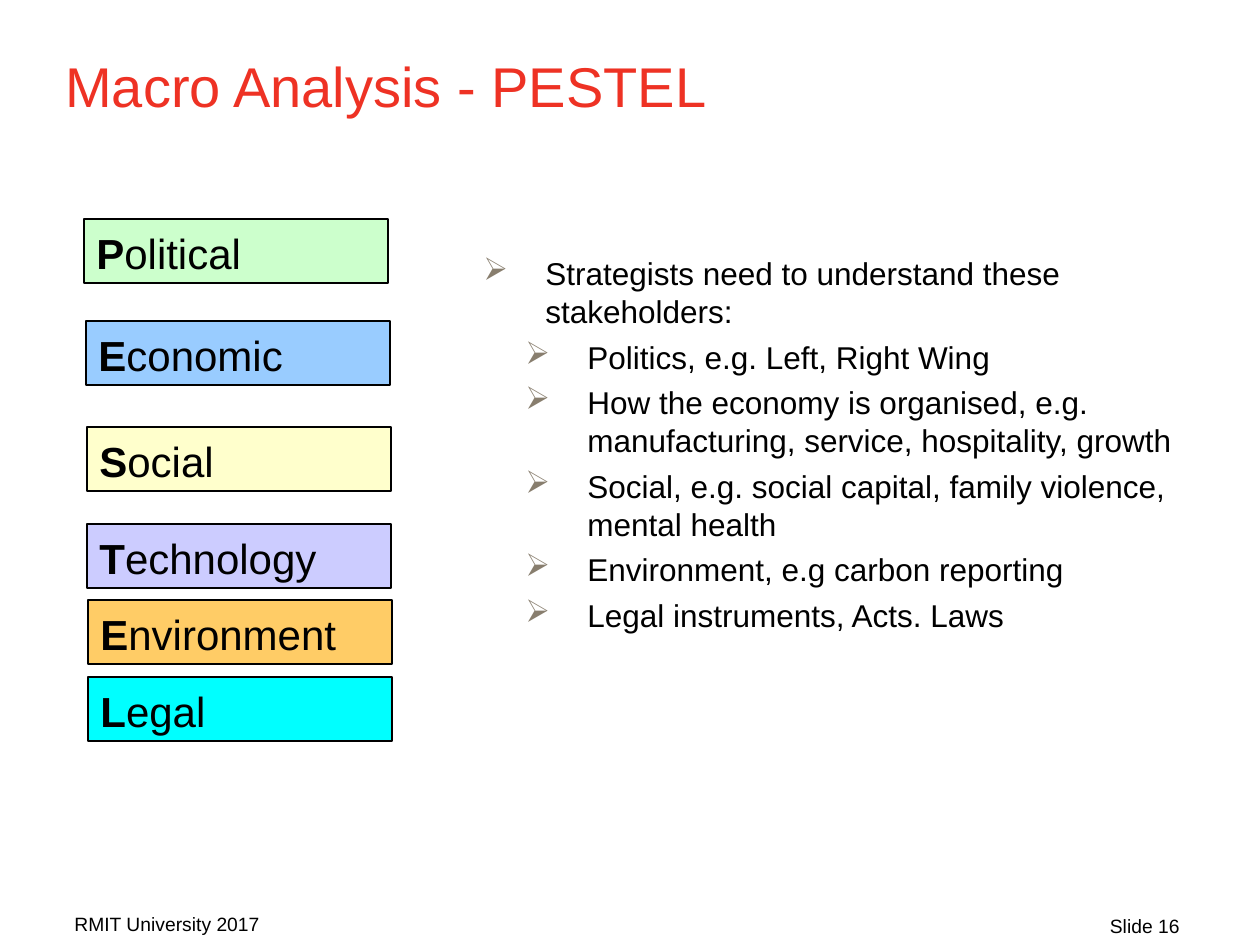
from lxml.etree import SubElement
from pptx import Presentation
from pptx.dml.color import RGBColor
from pptx.enum.shapes import MSO_SHAPE as Shape
from pptx.enum.text import MSO_ANCHOR as Anchor, PP_ALIGN as Align
from pptx.oxml.ns import qn
from pptx.util import Pt

SCALE = 914400 / 126
BLACK = "000000"
RED = "EE3224"
BULLET_COLOR = "887E6E"
INDENT = 62
LEVEL_STEP = 42

TITLE = "Macro Analysis - PESTEL"
FACTORS = [
    ("Political", 84, 219, "CCFFCC"),
    ("Economic", 86, 321, "99CCFF"),
    ("Social", 87, 427, "FFFFCC"),
    ("Technology", 87, 524, "CCCCFF"),
    ("Environment", 88, 600, "FFCC66"),
    ("Legal", 88, 677, "00FFFF"),
]
POINTS = [
    (0, "Strategists need to understand these stakeholders:"),
    (1, "Politics, e.g. Left, Right Wing"),
    (1, "How the economy is organised, e.g. manufacturing, service, hospitality, growth"),
    (1, "Social, e.g. social capital, family violence, mental health"),
    (1, "Environment, e.g carbon reporting"),
    (1, "Legal instruments, Acts. Laws"),
]


def px(value):
    return round(value * SCALE)


def color(value):
    return RGBColor.from_string(value)


def set_font(para, size, value=BLACK):
    para.font.name = "Arial"
    para.font.size = Pt(size)
    para.font.color.rgb = color(value)


def add_box(page, left, top, width, height):
    box = page.shapes.add_textbox(px(left), px(top), px(width), px(height))
    box.text_frame.word_wrap = True
    return box.text_frame


def add_line(page, text, place, size, value=BLACK, align=Align.LEFT):
    para = add_box(page, *place).paragraphs[0]
    para.text = text
    para.alignment = align
    set_font(para, size, value)


def add_factor(page, name, left, top, fill):
    box = page.shapes.add_shape(Shape.RECTANGLE, px(left), px(top), px(304), px(64))
    box.shadow.inherit = False
    box.fill.solid()
    box.fill.fore_color.rgb = color(fill)
    box.line.color.rgb = color(BLACK)
    box.line.width = Pt(0.75)
    frame = box.text_frame
    frame.vertical_anchor = Anchor.MIDDLE
    frame.margin_top, frame.margin_bottom = px(8), px(4)
    para = frame.paragraphs[0]
    para.alignment = Align.LEFT
    for text, bold in ((name[0], True), (name[1:], False)):
        span = para.add_run()
        span.text = text
        span.font.bold = bold
    set_font(para, 24)


def add_bullet(para, level):
    props = para._p.get_or_add_pPr()
    props.set("marL", str(px(INDENT + LEVEL_STEP * level)))
    props.set("indent", str(px(-INDENT)))
    tint = SubElement(props, qn("a:buClr"))
    SubElement(tint, qn("a:srgbClr"), val=BULLET_COLOR)
    SubElement(props, qn("a:buChar"), char="➢")


def add_points(page):
    frame = add_box(page, 471, 248, 716, 487)
    for index, (level, text) in enumerate(POINTS):
        para = frame.add_paragraph() if index else frame.paragraphs[0]
        para.text = text
        para.level = level
        if index:
            para.space_before = Pt(4.5)
        add_bullet(para, level)
        set_font(para, 18)


def main():
    deck = Presentation()
    deck.slide_width, deck.slide_height = px(1260), px(945)
    page = deck.slides.add_slide(deck.slide_layouts[6])
    add_line(page, TITLE, (53, 45, 1134, 120), 32, RED)
    for factor in FACTORS:
        add_factor(page, *factor)
    add_points(page)
    add_line(page, "RMIT University 2017", (62, 906, 294, 30), 11)
    add_line(page, "Slide 16", (898, 908, 294, 30), 11, align=Align.RIGHT)
    deck.save("out.pptx")


if __name__ == "__main__":
    main()
